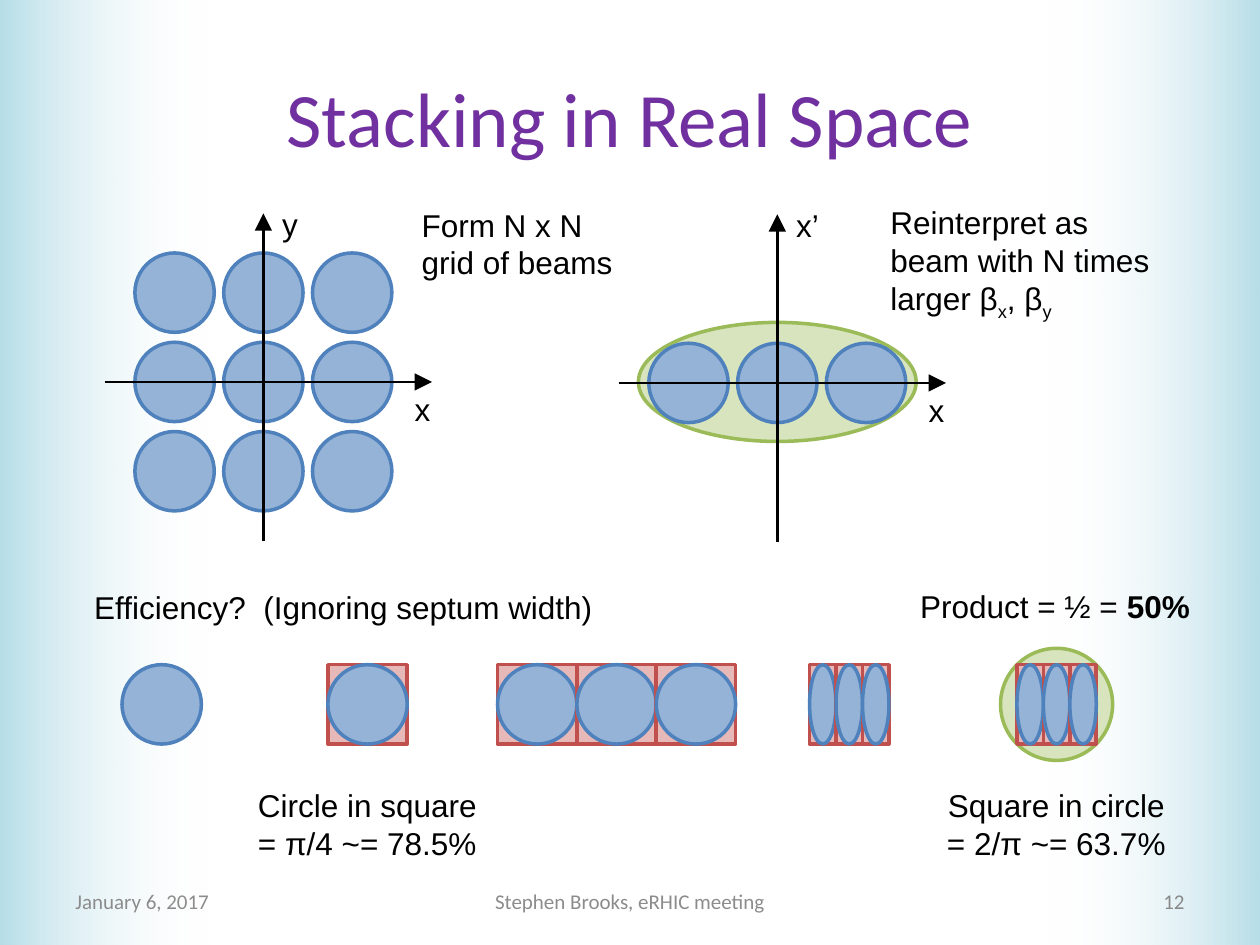
from lxml import etree
from pptx import Presentation
from pptx import util as u
from pptx.dml.color import RGBColor
from pptx.enum import shapes, text
from pptx.oxml.ns import qn

BLUE = ("95B3D7", "4F81BD")
RED = ("E6B9B8", "C0504D")
GREEN = ("D7E4BD", "9BBB59")
OVAL = shapes.MSO_SHAPE.OVAL
RECTANGLE = shapes.MSO_SHAPE.RECTANGLE
LEFT, CENTER, RIGHT = text.PP_ALIGN.LEFT, text.PP_ALIGN.CENTER, text.PP_ALIGN.RIGHT
BEAM = 1.6  # beam diameter in cm


def colour(value):
    return RGBColor.from_string(value)


class Painter:
    """Holds the text style and the slide being drawn; lengths are in cm."""

    font, size, ink = "Arial", 18, "000000"

    def __init__(self, slide):
        self.slide = slide

    def shape(self, kind, left, top, width, height, colours):
        shape = self.slide.shapes.add_shape(
            kind, u.Cm(left), u.Cm(top), u.Cm(width), u.Cm(height))
        shape.shadow.inherit = False
        fill, line = colours
        shape.fill.solid()
        shape.fill.fore_color.rgb = colour(fill)
        shape.line.color.rgb = colour(line)
        shape.line.width = u.Pt(2)

    def oval(self, x, y, width, height, colours):
        """Ellipse placed by its centre."""
        self.shape(OVAL, x - width / 2, y - height / 2, width, height, colours)

    def band(self, left, rotation):
        """Side band fading to fully transparent white."""
        shape = self.slide.shapes.add_shape(
            RECTANGLE, u.Cm(left), 0, u.Cm(4.29), u.Cm(19.05))
        shape.shadow.inherit = False
        shape.rotation = rotation
        shape.line.fill.background()
        shape.fill.gradient()
        shape.fill.gradient_angle = 0
        for stop, value in zip(shape.fill.gradient_stops, ("B7DEE8", "FFFFFF")):
            stop.color.rgb = colour(value)
        clear = list(shape._element.spPr.iter(qn("a:srgbClr")))[-1]
        etree.SubElement(clear, qn("a:alpha"), val="0")

    def arrow(self, x1, y1, x2, y2):
        line = self.slide.shapes.add_connector(
            shapes.MSO_CONNECTOR.STRAIGHT, u.Cm(x1), u.Cm(y1), u.Cm(x2), u.Cm(y2))
        line.line.color.rgb = colour(self.ink)
        line.line.width = u.Pt(1.5)
        outline = line.line._get_or_add_ln()
        etree.SubElement(outline, qn("a:tailEnd"), type="triangle", w="lg", len="lg")
        etree.SubElement(line._element.spPr, qn("a:effectLst"))

    def text(self, left, top, width, height, runs, align=LEFT, wrap=True,
             anchor=text.MSO_ANCHOR.TOP, font=None, size=None, ink=None):
        """Runs are (words, style) pairs; style is '', 'bold' or 'sub'."""
        box = self.slide.shapes.add_textbox(
            u.Cm(left), u.Cm(top), u.Cm(width), u.Cm(height))
        frame = box.text_frame
        frame.word_wrap = wrap
        frame.vertical_anchor = anchor
        paragraph = frame.paragraphs[0]
        paragraph.alignment = align
        for words, style in runs:
            run = paragraph.add_run()
            run.text = words
            run.font.name = font or self.font
            run.font.size = u.Pt(size or self.size)
            run.font.color.rgb = colour(ink or self.ink)
            if style == "bold":
                run.font.bold = True
            elif style == "sub":
                run._r.get_or_add_rPr().set("baseline", "-25000")

    def axes(self, x, y, vertical_label):
        self.arrow(x - 3.2, y, x + 3.4, y)
        self.arrow(x, y + 3.2, x, y - 3.4)
        for left, top, label in ((x + 2.8, y + 0.03, "x"),
                                 (x + 0.13, y - 3.7, vertical_label)):
            self.text(left, top, 1.2, 1.02, [(label, "")])

    def beam_row(self, x, y):
        for step in (-1, 0, 1):
            self.oval(x + step * 1.79, y, BEAM, BEAM, BLUE)

    def boxed_beams(self, left, top, count, width):
        for index in range(count):
            for kind, colours in ((RECTANGLE, RED), (OVAL, BLUE)):
                self.shape(kind, left + index * width, top, width, BEAM, colours)


def main():
    presentation = Presentation()
    presentation.slide_width, presentation.slide_height = u.Cm(25.4), u.Cm(19.05)
    painter = Painter(presentation.slides.add_slide(presentation.slide_layouts[6]))

    # Background bands
    painter.band(21.11, 180)
    painter.band(0, 0)

    # Title and footer
    middle = text.MSO_ANCHOR.MIDDLE
    painter.text(1.27, 0.76, 22.86, 3.18, [("Stacking in Real Space", "")], CENTER,
                 anchor=middle, font="Calibri", size=44, ink="7030A0")
    for left, width, words, align, ink in (
            (1.27, 5.93, "January 6, 2017", LEFT, "8C8C8C"),
            (8.68, 8.04, "Stephen Brooks, eRHIC meeting", CENTER, "8C8C8C"),
            (18.2, 5.93, "12", RIGHT, "898989")):
        painter.text(left, 17.66, width, 1.01, [(words, "")], align,
                     anchor=middle, font="Calibri", size=12, ink=ink)

    # Grid of beams in x and y
    x, y = 5.31, 7.7
    for step in (-1, 0, 1):
        painter.beam_row(x, y + step * 1.8)
    painter.axes(x, y, "y")
    painter.text(8.25, 4.02, 4.78, 1.8, [("Form N x N grid of beams", "")])

    # One row of beams in phase space
    x, y = 15.67, 7.72
    painter.oval(x, y - 0.02, 5.6, 2.4, GREEN)
    painter.beam_row(x, y)
    painter.axes(x, y, "x’")
    painter.text(17.7, 3.97, 6.2, 2.57, [
        ("Reinterpret as beam with N times larger β", ""), ("x", "sub"),
        (", β", ""), ("y", "sub")])

    # Efficiency steps
    top = 13.4
    middle_line = top + BEAM / 2
    narrow = BEAM / 3
    painter.oval(3.26, middle_line, BEAM, BEAM, BLUE)
    painter.boxed_beams(6.61, top, 1, BEAM)
    painter.boxed_beams(10.03, top, 3, BEAM)
    painter.boxed_beams(16.32, top, 3, narrow)
    painter.oval(21.3, middle_line, 2.26, 2.26, GREEN)
    painter.boxed_beams(20.5, top, 3, narrow)

    # Efficiency captions
    painter.text(1.65, 11.73, 10.64, 1.02,
                 [("Efficiency?  (Ignoring septum width)", "")], wrap=False)
    painter.text(18.3, 11.71, 6, 1.02, [("Product = ½ = ", ""), ("50%", "bold")])
    painter.text(4.85, 15.72, 5.11, 1.8,
                 [("Circle in square = π/4 ~= 78.5%", "")], CENTER)
    painter.text(18.77, 15.72, 5.05, 1.8,
                 [("Square in circle = 2/π ~= 63.7%", "")], CENTER)

    presentation.save("out.pptx")


if __name__ == "__main__":
    main()
